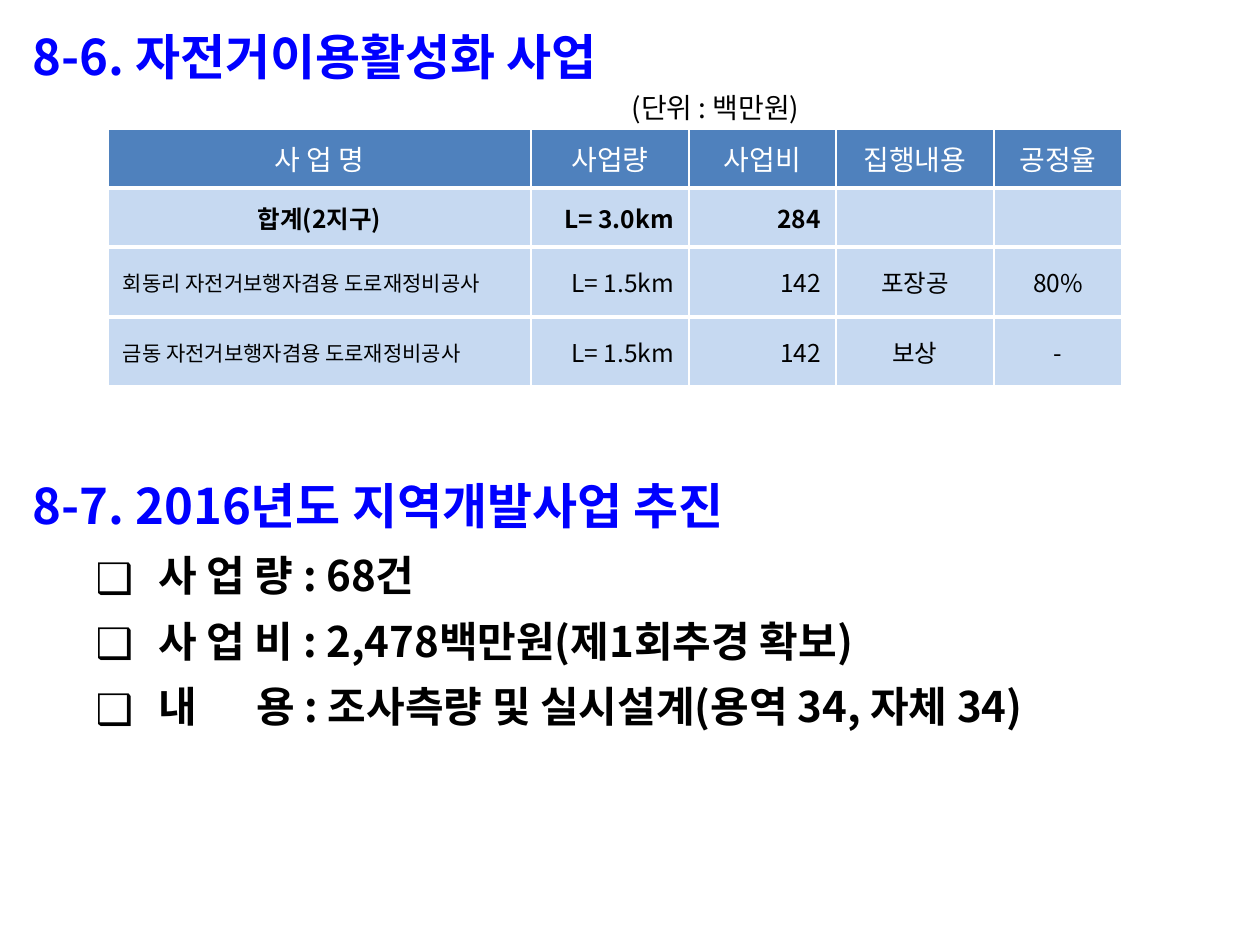
from lxml.etree import SubElement
from pptx import Presentation
from pptx.dml.color import RGBColor
from pptx.enum.text import MSO_ANCHOR, MSO_AUTO_SIZE, PP_ALIGN
from pptx.oxml import parse_xml
from pptx.oxml.ns import nsdecls, qn
from pptx.util import Pt

PX = 914400 / 126
FONT = "Noto Sans CJK KR"
BLUE, BLACK, WHITE = "0000FF", "000000", "FFFFFF"
HEADER_FILL, ROW_FILL = "4F81BD", "C6D9F1"
LEFT, CENTER, RIGHT = PP_ALIGN.LEFT, PP_ALIGN.CENTER, PP_ALIGN.RIGHT


def px(length):
    return round(length * PX)


def style(para, size, color, bold=False, align=LEFT):
    para.alignment = align
    font = para.font
    font.size, font.bold, font.name = Pt(size), bold, FONT
    font.color.rgb = RGBColor.from_string(color)
    SubElement(font._element, qn("a:ea")).set("typeface", FONT)


deck = Presentation()
deck.slide_width, deck.slide_height = px(1260), px(945)
page = deck.slides.add_slide(deck.slide_layouts[1])
title, body = page.shapes.title, page.placeholders[1]
for box, top, width, height in ((title, 20, 1152, 113), (body, 452, 1211, 296)):
    box.left, box.top, box.width, box.height = px(20), px(top), px(width), px(height)
    box.text_frame.auto_size = MSO_AUTO_SIZE.NONE
    box.text_frame.vertical_anchor = MSO_ANCHOR.TOP

# Title with the unit note below it
heading = title.text_frame.paragraphs[0]
heading.text = "8-6. 자전거이용활성화 사업"
heading.space_before = Pt(5.6)
style(heading, 28, BLUE, bold=True)
unit = title.text_frame.add_paragraph()
unit.text = "(단위 : 백만원)"
unit.space_before = Pt(3.2)
unit._p.get_or_add_pPr().set("marL", str(px(599)))
style(unit, 16, BLACK)

# Project table
rows = [
    ["사 업 명", "사업량", "사업비", "집행내용", "공정율"],
    ["합계(2지구)", "L= 3.0km", "284", "", ""],
    ["회동리 자전거보행자겸용 도로재정비공사", "L= 1.5km", "142", "포장공", "80%"],
    ["금동 자전거보행자겸용 도로재정비공사", "L= 1.5km", "142", "보상", "-"],
]
widths, heights = [423, 158, 147, 158, 128], [59, 59, 70, 70]
aligns = [LEFT, RIGHT, RIGHT, CENTER, CENTER]
table = page.shapes.add_table(
    len(rows), len(widths), px(108), px(129), px(sum(widths)), px(sum(heights))
).table
for column, width in zip(table.columns, widths):
    column.width = px(width)
for r, (row, height) in enumerate(zip(rows, heights)):
    table.rows[r].height = px(height)
    for c, text in enumerate(row):
        cell = table.cell(r, c)
        cell.text = text
        cell.vertical_anchor = MSO_ANCHOR.MIDDLE
        cell.fill.solid()
        cell.fill.fore_color.rgb = RGBColor.from_string(ROW_FILL if r else HEADER_FILL)
        para = cell.text_frame.paragraphs[0]
        if r == 0:
            style(para, 16, WHITE, align=CENTER)
        else:
            cell.margin_left = cell.margin_right = px(15)
            align = CENTER if r == 1 and c == 0 else aligns[c]
            style(para, 12 if r > 1 and c == 0 else 14, BLACK, r == 1, align)
        borders = {"lnL": 1, "lnR": 1, "lnT": 3 if r else 1, "lnB": 3}
        for i, (side, points) in enumerate(borders.items()):
            cell._tc.get_or_add_tcPr().insert(i, parse_xml(
                f'<a:{side} {nsdecls("a")} w="{Pt(points)}"><a:solidFill>'
                f'<a:srgbClr val="{WHITE}"/></a:solidFill></a:{side}>'))

# Second heading and its bullet list
lines = [
    ["8-7. 2016년도 지역개발사업 추진"],
    ["사 업 량 : 68건"],
    ["사 업 비 : 2,478백만원(제1회추경 확보)"],
    ["내", " ", "용 : 조사측량 및 실시설계(용역 34, 자체 34)"],
]
for i, parts in enumerate(lines):
    para = body.text_frame.add_paragraph() if i else body.text_frame.paragraphs[0]
    for part in parts:
        span = para.add_run()
        span.text = part
        if part == " ":  # widened so the label lines up with those above
            span._r.get_or_add_rPr().set("spc", "2850")
    para.line_spacing, para.space_before = 1.3, Pt(0)
    props = para._p.get_or_add_pPr()
    if i:
        para.level = 1
        props.set("marL", str(px(126)))
        props.set("indent", str(px(-63)))
        color = SubElement(props, qn("a:buClr"))
        SubElement(color, qn("a:srgbClr")).set("val", BLACK)
        SubElement(props, qn("a:buFont")).set("typeface", FONT)
        SubElement(props, qn("a:buChar")).set("char", "❑")
    else:
        props.set("marL", "0")
        props.set("indent", "0")
        SubElement(props, qn("a:buNone"))
    style(para, 24 if i else 28, BLACK if i else BLUE, bold=True)

deck.save("out.pptx")
